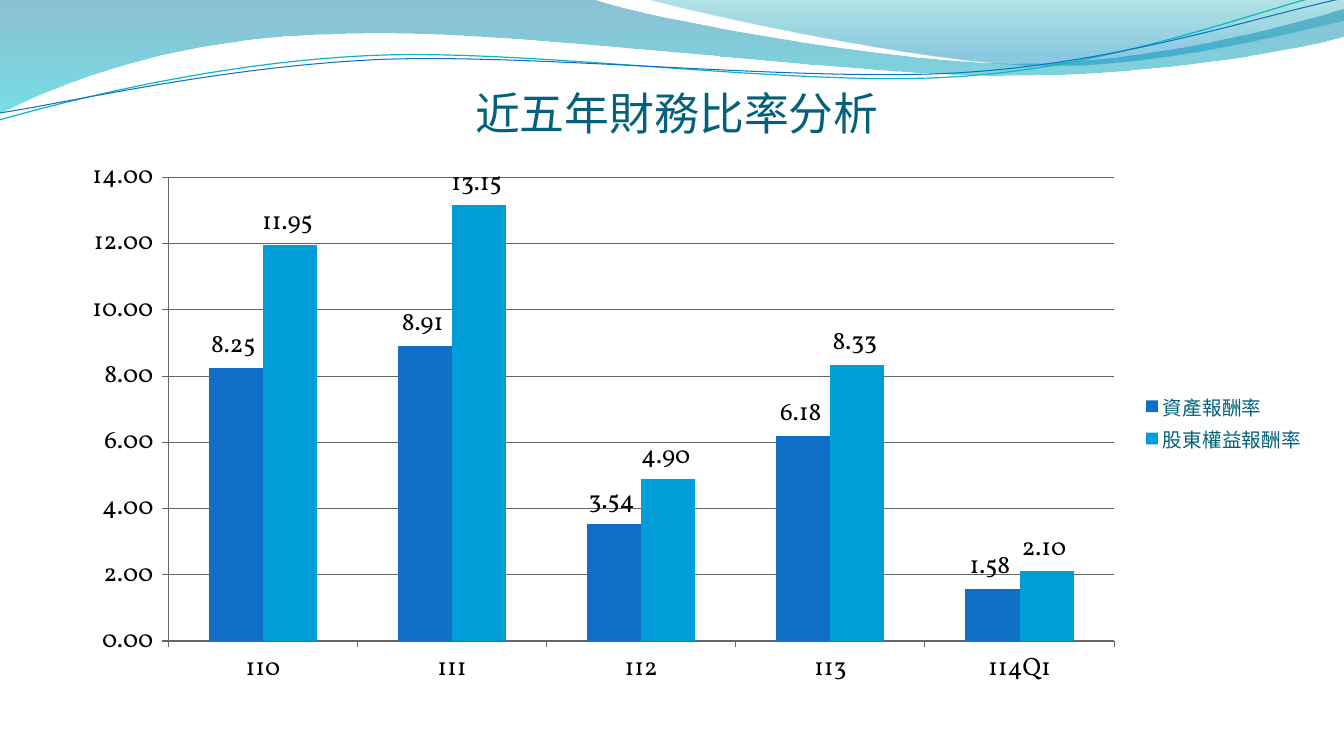
from pptx import Presentation
from pptx.chart.data import CategoryChartData
from pptx.dml.color import RGBColor
from pptx.enum.chart import XL_CHART_TYPE as ChartType, XL_LABEL_POSITION as LabelPosition
from pptx.enum.chart import XL_LEGEND_POSITION as LegendPosition, XL_TICK_MARK as TickMark
from pptx.enum.text import MSO_ANCHOR as Anchor, PP_ALIGN as Align
from pptx.oxml import parse_xml
from pptx.oxml.ns import nsdecls, qn
from pptx.util import Inches, Pt

TITLE = "近五年財務比率分析"
YEARS = ["110", "111", "112", "113", "114Q1"]
RATIOS = [
    ("資產報酬率", RGBColor(0x0F, 0x6F, 0xC6), [8.25, 8.91, 3.54, 6.18, 1.58]),
    ("股東權益報酬率", RGBColor(0x00, 0x9D, 0xD9), [11.95, 13.15, 4.90, 8.33, 2.10]),
]
NUMBER_FORMAT = "0.00_ "
CJK_FONT, LATIN_FONT = "Noto Sans CJK SC", "Vollkorn"
TEAL = RGBColor(0x04, 0x61, 0x7B)
BLACK = RGBColor(0, 0, 0)
GRAY = RGBColor(0x66, 0x66, 0x66)

# A path is a start point, then (x, y) for a line or six numbers for a Bézier curve.
# A gradient stop is (position %, colour, opacity %).
WAVES = [
    ([(0, 0), (5.87, -0.01), (6.34, 0.17, 8.85, 0.63, 10.11, 0.63),
      (11.38, 0.63, 12.78, 0.26, 13.33, 0.09), (13.35, 0.36),
      (13.11, 0.44, 11.6, 0.76, 9.94, 0.75), (8.29, 0.75, 5.09, 0.28, 3.43, 0.34),
      (1.72, 0.36, 0.61, 0.83, -0.01, 1.13)],
     [(0, "0074A1", 45), (100, "00C6CF", 55)]),
    ([(6.39, -0.01), (6.79, 0.11, 9.09, 0.62, 10.25, 0.65),
      (11.41, 0.69, 12.82, 0.32, 13.33, 0.21), (13.33, 0)],
     [(0, "00A1A9", 30), (80, "008BBF", 45)]),
]
STRANDS = [
    ([(-0.01, 1.19), (0.64, 1.01, 2.11, 0.62, 3.69, 0.55),
      (5.27, 0.48, 7.9, 0.87, 9.5, 0.76), (11.1, 0.66, 12.52, 0.08, 13.31, -0.1)],
     RGBColor(0x0A, 0xB8, 0xBF), 0.85),
    ([(0, 1.12), (0.63, 1.03, 2.18, 0.66, 3.78, 0.59),
      (5.37, 0.53, 7.96, 0.82, 9.55, 0.72), (11.15, 0.62, 12.55, 0.14, 13.34, -0.02)],
     RGBColor(0x0F, 0x6F, 0xC6), 0.75),
]
CHART_BOX = (0.67, 1.47, 12.39, 5.44)
PLOT_BOX = (1.67, 1.76, 9.38, 4.6)


def add_outline(slide, path, close):
    """Build a freeform through the path's anchors, then bend the curved segments."""
    steps = [tuple(map(Inches, step)) for step in path]
    anchors = [step[-2:] for step in steps]
    builder = slide.shapes.build_freeform(*anchors[0])
    builder.add_line_segments(anchors[1:], close=close)
    shape = builder.convert_to_shape()
    left, top = (min(values) for values in zip(*anchors))
    segments = list(shape.element.iter(qn("a:lnTo")))
    for segment, step in zip(segments, steps[1:]):
        if len(step) == 6:
            points = "".join(f'<a:pt x="{x - left}" y="{y - top}"/>'
                             for x, y in zip(step[::2], step[1::2]))
            curve = parse_xml(f'<a:cubicBezTo {nsdecls("a")}>{points}</a:cubicBezTo>')
            segment.getparent().replace(segment, curve)
    shape.shadow.inherit = False
    shape.fill.background()
    return shape


def fill_downward(shape, stops):
    """Fill a shape with a translucent gradient from top to bottom."""
    marks = "".join(
        f'<a:gs pos="{position * 1000}"><a:srgbClr val="{color}">'
        f'<a:alpha val="{opacity * 1000}"/></a:srgbClr></a:gs>'
        for position, color, opacity in stops)
    gradient = parse_xml(f'<a:gradFill {nsdecls("a")} rotWithShape="1"><a:gsLst>{marks}</a:gsLst>'
                         '<a:lin ang="5400000" scaled="1"/></a:gradFill>')
    properties = shape.element.spPr
    properties.replace(properties.find(qn("a:noFill")), gradient)


def set_font(font, name, size, color):
    font.name, font.size = name, Pt(size)
    font.color.rgb = color


def set_east_asian(properties, name):
    latin = properties.find(qn("a:latin"))
    latin.addnext(parse_xml(f'<a:ea {nsdecls("a")} typeface="{name}"/>'))


def add_text(slide, text, box, *, font, size, color, align, anchor):
    frame = slide.shapes.add_textbox(*map(Inches, box)).text_frame
    frame.word_wrap = True
    frame.vertical_anchor = anchor
    frame.margin_left = frame.margin_right = frame.margin_bottom = 0
    para = frame.paragraphs[0]
    para.alignment = align
    span = para.add_run()
    span.text = text
    set_font(span.font, font, size, color)
    set_east_asian(span.font._element, font)


def place_plot(chart):
    """Fix the inner plot area inside the chart frame."""
    left, top, width, height = CHART_BOX
    x, y, w, h = PLOT_BOX
    shares = {"x": (x - left) / width, "y": (y - top) / height, "w": w / width, "h": h / height}
    values = "".join(f'<c:{key} val="{share:.4f}"/>' for key, share in shares.items())
    layout = parse_xml(f'<c:layout {nsdecls("c")}><c:manualLayout><c:layoutTarget val="inner"/>'
                       '<c:xMode val="edge"/><c:yMode val="edge"/>'
                       f'{values}</c:manualLayout></c:layout>')
    area = chart.element.find(".//" + qn("c:plotArea"))
    for old in area.findall(qn("c:layout")):
        area.remove(old)
    area.insert(0, layout)


def add_ratio_chart(slide):
    data = CategoryChartData(number_format=NUMBER_FORMAT)
    data.categories = YEARS
    for name, _, values in RATIOS:
        data.add_series(name, values)
    chart = slide.shapes.add_chart(ChartType.COLUMN_CLUSTERED, *map(Inches, CHART_BOX), data).chart
    set_font(chart.font, LATIN_FONT, 18, BLACK)
    chart.has_title = False
    place_plot(chart)

    plot = chart.plots[0]
    plot.vary_by_categories = False
    plot.gap_width, plot.overlap = 150, 0
    for series, (_, color, _) in zip(plot.series, RATIOS):
        series.format.fill.solid()
        series.format.fill.fore_color.rgb = color
        labels = series.data_labels
        labels.show_value = True
        labels.position = LabelPosition.OUTSIDE_END
        labels.number_format = NUMBER_FORMAT
        labels.number_format_is_linked = False

    value_axis = chart.value_axis
    value_axis.minimum_scale, value_axis.maximum_scale, value_axis.major_unit = 0, 14, 2
    value_axis.tick_labels.number_format = NUMBER_FORMAT
    value_axis.tick_labels.number_format_is_linked = False
    value_axis.has_major_gridlines = True
    for axis in (chart.category_axis, value_axis):
        axis.major_tick_mark = TickMark.OUTSIDE
    for part in (chart.category_axis, value_axis, value_axis.major_gridlines):
        part.format.line.color.rgb = GRAY
        part.format.line.width = Pt(0.75)

    chart.has_legend = True
    legend = chart.legend
    legend.position = LegendPosition.RIGHT
    legend.include_in_layout = False
    set_font(legend.font, CJK_FONT, 14, TEAL)
    set_east_asian(legend.font._element, CJK_FONT)


def main():
    deck = Presentation()
    deck.slide_width, deck.slide_height = Inches(13.33), Inches(7.5)
    page = deck.slides.add_slide(deck.slide_layouts[6])
    for path, stops in WAVES:
        wave = add_outline(page, path, close=True)
        fill_downward(wave, stops)
        wave.line.fill.background()
    for path, color, width in STRANDS:
        strand = add_outline(page, path, close=False)
        strand.line.color.rgb = color
        strand.line.width = Pt(width)
    add_text(page, TITLE, (1.84, 0.77, 9.75, 0.61), font=CJK_FONT, size=32, color=TEAL,
             align=Align.CENTER, anchor=Anchor.BOTTOM)
    add_ratio_chart(page)
    deck.save("out.pptx")


if __name__ == "__main__":
    main()
